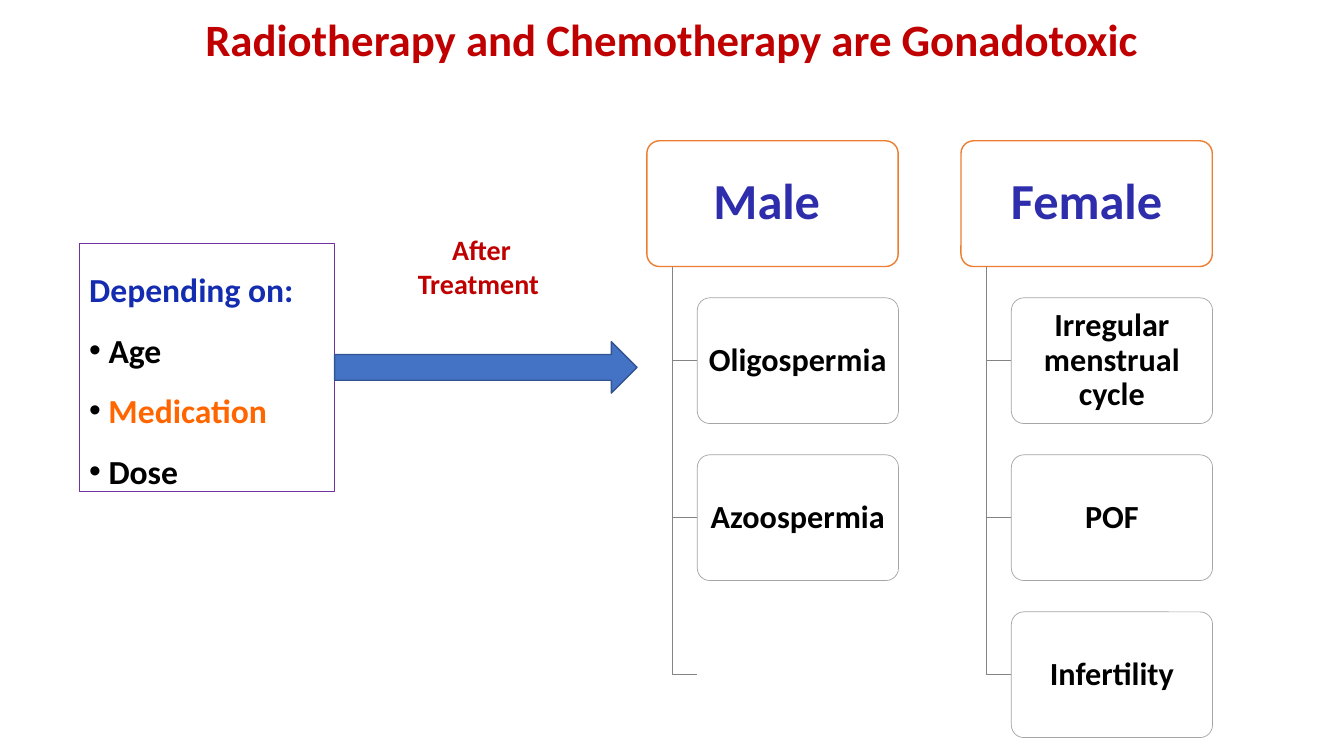
"""Builds the slide on gonadotoxic effects of radiotherapy and chemotherapy."""
from dataclasses import dataclass
from typing import Any

import lxml.etree
import pptx
import pptx.dml.color
import pptx.enum.shapes
import pptx.enum.text
import pptx.oxml.ns
import pptx.util

RGBColor = pptx.dml.color.RGBColor
Shapes = pptx.enum.shapes.MSO_SHAPE
Align = pptx.enum.text.PP_ALIGN
Anchor = pptx.enum.text.MSO_ANCHOR
AutoSize = pptx.enum.text.MSO_AUTO_SIZE

RED = RGBColor(0xC0, 0x00, 0x00)
BLUE = RGBColor(0x14, 0x2C, 0xAF)
INDIGO = RGBColor(0x2E, 0x2E, 0xAD)
PURPLE = RGBColor(0x70, 0x30, 0xA0)
BLACK = RGBColor(0x00, 0x00, 0x00)
WHITE = RGBColor(0xFF, 0xFF, 0xFF)
BRIGHT_ORANGE = RGBColor(0xFF, 0x66, 0x00)
HEAD_ORANGE = RGBColor(0xED, 0x7D, 0x31)
CARD_GREY = RGBColor(0xA5, 0xA5, 0xA5)
BRANCH_GREY = RGBColor(0x84, 0x84, 0x84)
ARROW_BLUE = RGBColor(0x44, 0x72, 0xC4)
ARROW_EDGE = RGBColor(0x32, 0x54, 0x91)

SLIDE_WIDTH = pptx.util.Inches(13.33)
SLIDE_HEIGHT = pptx.util.Inches(7.5)

TREE_LEFT, TREE_TOP = 48.13, 18.63
COLUMN_PITCH, ROW_PITCH = 23.37, 20.77
HEAD_WIDTH, CARD_WIDTH, CARD_HEIGHT = 18.7, 14.97, 16.63
BRANCH_INDENT, CARD_INDENT = 1.87, 3.75


@dataclass(frozen=True)
class Box:
    """A rectangle in percent of the slide's width and height."""
    left: float
    top: float
    width: float
    height: float

    def place(self) -> dict[str, int]:
        """Return the rectangle as position and size values."""
        return {"left": across(self.left), "top": down(self.top),
                "width": across(self.width), "height": down(self.height)}


@dataclass(frozen=True)
class Style:
    """The look of a rounded card."""
    line: RGBColor
    line_width: float
    text: RGBColor
    size: float
    side_inset: float
    alpha: int


@dataclass(frozen=True)
class Branch:
    """A heading, the cards under it and its number of branch lines."""
    heading: str
    effects: tuple[str, ...]
    lines: int


HEAD = Style(HEAD_ORANGE, 1, INDIGO, 36, 0.07, 100)
CARD = Style(CARD_GREY, 0.5, BLACK, 23, 0.04, 90)
BRANCHES = (
    Branch("Male ", ("Oligospermia", "Azoospermia"), 3),
    Branch("Female", ("Irregular menstrual cycle", "POF", "Infertility"), 3),
)
FACTORS = (
    (("Depending on:", BLUE),),
    ((" Age", BLACK),),
    ((" ", BLACK), ("Medication", BRIGHT_ORANGE)),
    ((" Dose", BLACK),),
)


def across(share: float) -> int:
    """Turn a percentage of the slide's width into a length."""
    return round(SLIDE_WIDTH * share / 100)


def down(share: float) -> int:
    """Turn a percentage of the slide's height into a length."""
    return round(SLIDE_HEIGHT * share / 100)


def apply(target: Any, values: dict[str, Any]) -> None:
    """Set each named value on the target."""
    for name, value in values.items():
        setattr(target, name, value)


def add_run(paragraph: Any, text: str, size: float, color: RGBColor) -> None:
    """Add a bold run to the paragraph."""
    run = paragraph.add_run()
    run.text = text
    apply(run.font, {"name": "Calibri", "size": pptx.util.Pt(size), "bold": True})
    run.font.color.rgb = color


def outline(shape: Any, color: RGBColor, width: float) -> None:
    """Give the shape a plain line and no shadow."""
    shape.shadow.inherit = False
    shape.line.color.rgb = color
    shape.line.width = pptx.util.Pt(width)


def add_preset(slide: Any, preset: Any, box: Box) -> Any:
    """Add a preset shape in the given box."""
    return slide.shapes.add_shape(preset, *box.place().values())


def add_card(slide: Any, box: Box, text: str, style: Style) -> None:
    """Add a rounded card with centred text."""
    card = add_preset(slide, Shapes.ROUNDED_RECTANGLE, box)
    card.adjustments[0] = 0.1
    outline(card, style.line, style.line_width)
    card.fill.solid()
    card.fill.fore_color.rgb = WHITE
    if style.alpha < 100:
        color = card.fill._xPr.find(".//" + pptx.oxml.ns.qn("a:srgbClr"))
        lxml.etree.SubElement(color, pptx.oxml.ns.qn("a:alpha"), val=str(style.alpha * 1000))
    inset = pptx.util.Inches(style.side_inset)
    apply(card.text_frame, {"word_wrap": True, "vertical_anchor": Anchor.MIDDLE,
                            "margin_left": inset, "margin_right": inset})
    paragraph = card.text_frame.paragraphs[0]
    apply(paragraph, {"alignment": Align.CENTER, "line_spacing": 0.9})
    add_run(paragraph, text, style.size, style.text)


def add_branch_line(slide: Any, left: float, row: int) -> None:
    """Draw the elbow from a heading to the card in the given row."""
    start = across(left + BRANCH_INDENT)
    end = across(left + CARD_INDENT)
    middle = down(TREE_TOP + row * ROW_PITCH + CARD_HEIGHT / 2)
    builder = slide.shapes.build_freeform(start, down(TREE_TOP + CARD_HEIGHT))
    builder.add_line_segments([(start, middle), (end, middle)], close=False)
    elbow = builder.convert_to_shape()
    elbow.fill.background()
    outline(elbow, BRANCH_GREY, 0.5)


def add_branch(slide: Any, column: int, branch: Branch) -> None:
    """Draw one column of the tree."""
    left = TREE_LEFT + column * COLUMN_PITCH
    add_card(slide, Box(left, TREE_TOP, HEAD_WIDTH, CARD_HEIGHT), branch.heading, HEAD)
    for row in range(1, branch.lines + 1):
        add_branch_line(slide, left, row)
    for row, effect in enumerate(branch.effects, start=1):
        box = Box(left + CARD_INDENT, TREE_TOP + row * ROW_PITCH, CARD_WIDTH, CARD_HEIGHT)
        add_card(slide, box, effect, CARD)


def add_title(slide: Any) -> None:
    """Place and format the title."""
    title = slide.shapes.title
    apply(title, Box(0, 1.73, 100, 16.67).place())
    apply(title.text_frame, {"word_wrap": True, "vertical_anchor": Anchor.TOP,
                             "auto_size": AutoSize.NONE})
    paragraph = title.text_frame.paragraphs[0]
    apply(paragraph, {"alignment": Align.CENTER, "line_spacing": 0.9})
    add_run(paragraph, "Radiotherapy and Chemotherapy are Gonadotoxic", 32, RED)


def add_factors(slide: Any) -> None:
    """Add the framed list of factors."""
    frame = add_preset(slide, Shapes.RECTANGLE, Box(5.9, 32.27, 18.98, 32.8))
    frame.fill.background()
    outline(frame, PURPLE, 0.75)
    apply(frame.text_frame, {"word_wrap": True, "vertical_anchor": Anchor.TOP,
                             "auto_size": AutoSize.SHAPE_TO_FIT_TEXT})
    for index, runs in enumerate(FACTORS):
        text_frame = frame.text_frame
        paragraph = text_frame.add_paragraph() if index else text_frame.paragraphs[0]
        if index:
            properties = paragraph._p.get_or_add_pPr()
            lxml.etree.SubElement(properties, pptx.oxml.ns.qn("a:buFont"), typeface="Arial")
            lxml.etree.SubElement(properties, pptx.oxml.ns.qn("a:buChar"), char="•")
        apply(paragraph, {"alignment": Align.LEFT, "line_spacing": 1.5})
        for text, color in runs:
            add_run(paragraph, text, 24, color)


def add_treatment_arrow(slide: Any) -> None:
    """Add the arrow and its label."""
    label = slide.shapes.add_textbox(*Box(30.01, 30.13, 11.63, 10.27).place().values())
    apply(label.text_frame, {"word_wrap": True, "auto_size": AutoSize.SHAPE_TO_FIT_TEXT})
    paragraph = label.text_frame.paragraphs[0]
    paragraph.alignment = Align.CENTER
    add_run(paragraph, "After Treatment ", 20, RED)
    arrow = add_preset(slide, Shapes.RIGHT_ARROW, Box(24.9, 45.2, 22.5, 6.8))
    arrow.fill.solid()
    arrow.fill.fore_color.rgb = ARROW_BLUE
    outline(arrow, ARROW_EDGE, 1)


def main() -> None:
    """Build and save the presentation."""
    presentation = pptx.Presentation()
    apply(presentation, {"slide_width": SLIDE_WIDTH, "slide_height": SLIDE_HEIGHT})
    slide = presentation.slides.add_slide(presentation.slide_layouts[5])
    add_title(slide)
    add_factors(slide)
    for column, branch in enumerate(BRANCHES):
        add_branch(slide, column, branch)
    add_treatment_arrow(slide)
    presentation.save("out.pptx")


if __name__ == "__main__":
    main()
